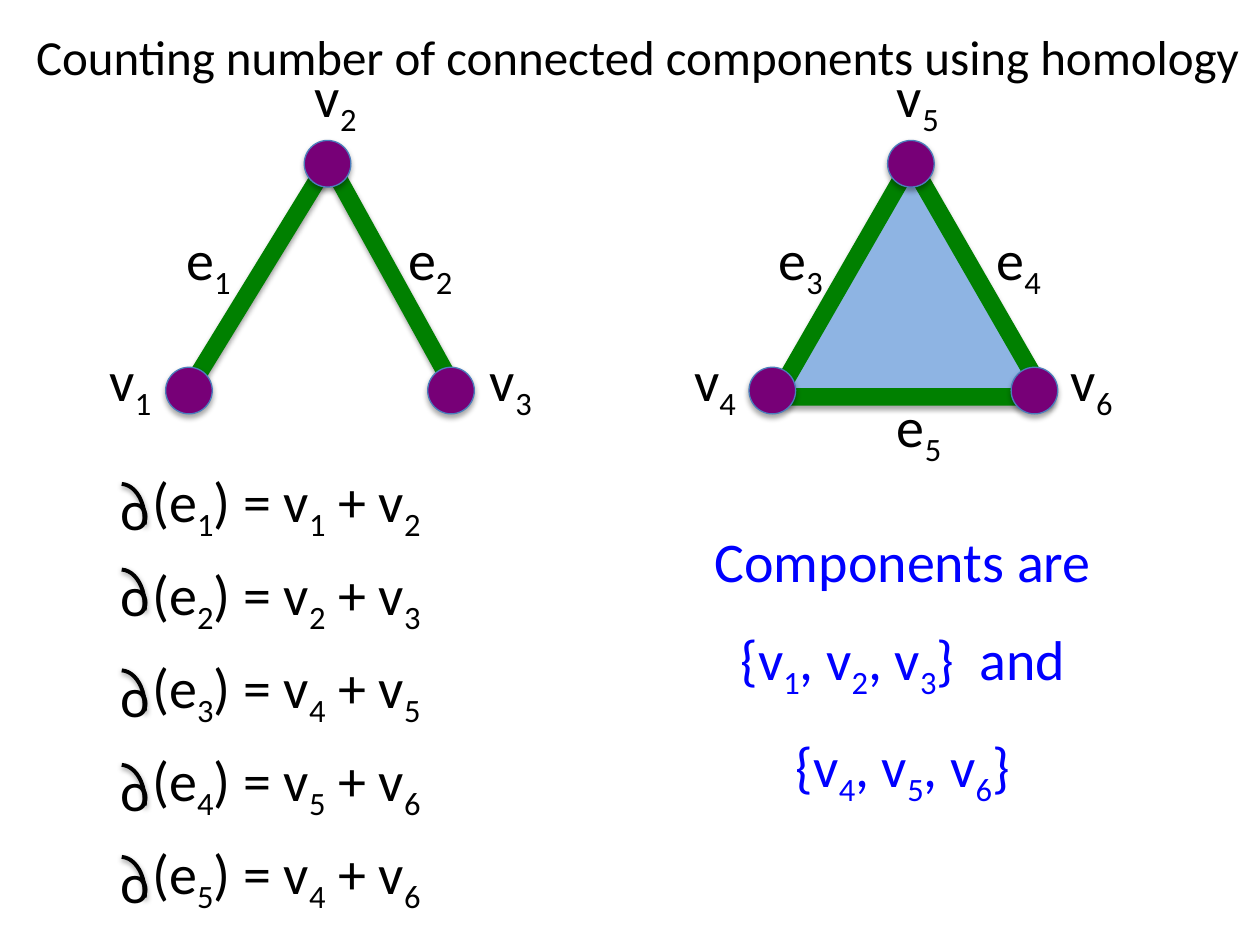
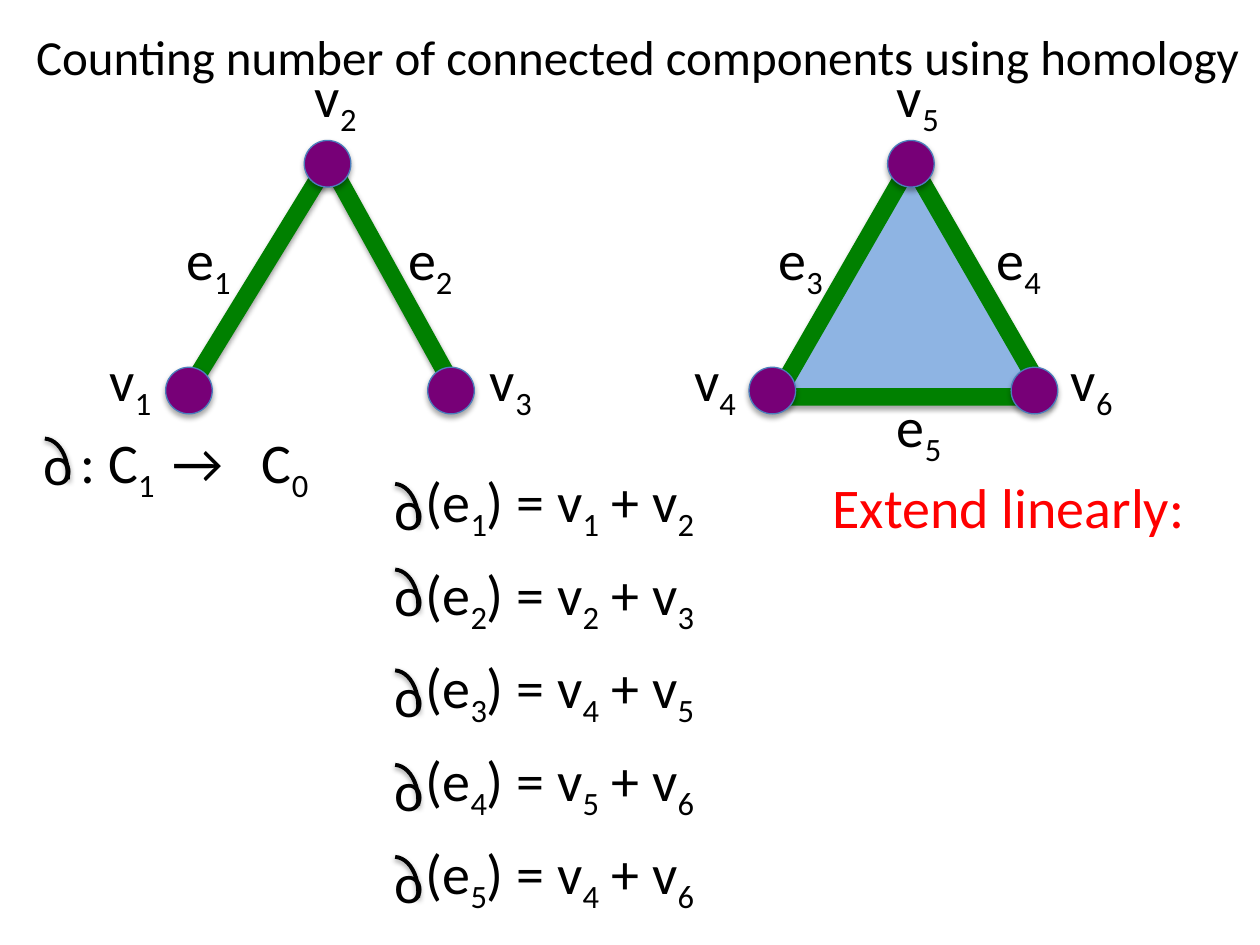
from pptx import Presentation
from pptx.dml.color import RGBColor
from pptx.enum.shapes import MSO_CONNECTOR as CONN, MSO_SHAPE as SHAPE
from pptx.enum.text import MSO_ANCHOR as ANCHOR, MSO_AUTO_SIZE as FIT, PP_ALIGN as ALIGN
from pptx.oxml import parse_xml
from pptx.oxml.ns import nsdecls
from pptx.util import Inches, Pt

BLACK = RGBColor(0x00, 0x00, 0x00)
BLUE = RGBColor(0x00, 0x00, 0xFF)
RED = RGBColor(0xFF, 0x00, 0x00)
GREEN = RGBColor(0x00, 0x80, 0x00)
PURPLE = RGBColor(0x77, 0x00, 0x77)
OUTLINE = RGBColor(0x4B, 0x7E, 0xBC)
SKY = RGBColor(0x8E, 0xB4, 0xE3)

# Content: "_" puts the next character in subscript
TITLE = "Counting number of connected components using homology"
TRIANGLE_GRAPH = {
    "triangle": (6.16, 1.29, 2.14, 1.86),
    "edges": [],
    "vertices": [(6.13, 3.1), (8.21, 3.1), (7.23, 1.3)],
    "labels": [("v_6", 8.4, 2.69), ("v_4", 5.41, 2.69), ("v_5", 7.02, 0.44),
               ("e_3", 6.08, 1.73), ("e_5", 7.02, 3.06), ("e_4", 7.81, 1.73)],
}
PATH_GRAPH = {
    "triangle": None,
    "edges": [((2.61, 1.28), (3.61, 3.09)), ((1.5, 3.09), (2.61, 1.28))],
    "vertices": [(1.5, 3.1), (3.58, 3.1), (2.6, 1.3)],
    "labels": [("v_1", 0.77, 2.69), ("v_2", 2.4, 0.44), ("v_3", 3.79, 2.69),
               ("e_1", 1.38, 1.73), ("e_2", 3.14, 1.73)],
}
# Boundary of each edge, with the top of its boundary symbol
BOUNDARIES = [("(e_1) = v_1 + v_2", 3.84), ("(e_2) = v_2 + v_3", 4.52),
              ("(e_3) = v_4 + v_5", 5.32), ("(e_4) = v_5 + v_6", 6.07),
              ("(e_5) = v_4 + v_6", 6.8)]
COMPONENTS = ["Components are", "{v_1, v_2, v_3}  and", "{v_4, v_5, v_6}"]
BOUNDARY_MAP = ": C_1\t→\tC_0"
EXTEND = "Extend linearly:"

DOT = 0.37
ROW_TOP, ROW_PITCH, ROW_H = 3.65, 0.74, 0.64
FONT = {"name": "Calibri", "size": Pt(32)}
TITLE_FONT = {"name": "Calibri", "size": Pt(28)}


def inches(*values):
    return [Inches(v) for v in values]


def add_run(p, text, color, font, subscript=False):
    r = p.add_run()
    r.text = text
    for name, value in font.items():
        setattr(r.font, name, value)
    r.font.color.rgb = color
    if subscript:
        r._r.get_or_add_rPr().set("baseline", "-25000")


def write(p, text, color=BLACK, font=FONT):
    head, *tails = text.split("_")
    if head:
        add_run(p, head, color, font)
    for tail in tails:
        add_run(p, tail[0], color, font, subscript=True)
        if tail[1:]:
            add_run(p, tail[1:], color, font)


def add_text(shapes, box, lines, color=BLACK, **para):
    tf = shapes.add_textbox(*inches(*box)).text_frame
    tf.word_wrap = True
    tf.auto_size = FIT.SHAPE_TO_FIT_TEXT
    for i, line in enumerate(lines):
        p = tf.add_paragraph() if i else tf.paragraphs[0]
        for name, value in para.items():
            setattr(p, name, value)
        write(p, line, color)
    return tf


def outline(sp, color, width, dist=1.6, alpha=38):
    """Set the line, then the soft shadow straight below."""
    sp.line.color.rgb = color
    sp.line.width = Pt(width)
    sp._element.spPr.append(parse_xml(
        f'<a:effectLst {nsdecls("a")}><a:outerShdw blurRad="{Pt(3.1)}" '
        f'dist="{Pt(dist)}" dir="5400000" rotWithShape="0"><a:srgbClr val="000000">'
        f'<a:alpha val="{alpha * 1000}"/></a:srgbClr></a:outerShdw></a:effectLst>'))


def add_solid(shapes, kind, box, fill, line, width):
    sp = shapes.add_shape(kind, *inches(*box))
    sp.fill.solid()
    sp.fill.fore_color.rgb = fill
    outline(sp, line, width, dist=1.8, alpha=35)


def add_graph(slide, graph):
    shapes = slide.shapes.add_group_shape().shapes
    if graph["triangle"]:
        add_solid(shapes, SHAPE.ISOSCELES_TRIANGLE, graph["triangle"], SKY, GREEN, 10)
    for start, end in graph["edges"]:
        outline(shapes.add_connector(CONN.STRAIGHT, *inches(*start, *end)), GREEN, 10)
    for x, y in graph["vertices"]:
        add_solid(shapes, SHAPE.OVAL, (x - DOT / 2, y - DOT / 2, DOT, DOT),
                  PURPLE, OUTLINE, 0.75)
    for text, x, y in graph["labels"]:
        add_text(shapes, (x, y, 0.71, ROW_H), [text])


def add_boundary_symbol(shapes, x, y):
    """Draw the boundary sign as an arc over a letter o."""
    sp = shapes.add_shape(SHAPE.ARC, *inches(x, y, 0.41, 0.62))
    sp.rotation = 4
    sp.fill.background()
    outline(sp, BLACK, 2.25)
    add_text(shapes, (x + 0.12, y - 0.12, 0.65, ROW_H), ["o"])


def add_boundaries(slide, x):
    for i, (text, symbol_top) in enumerate(BOUNDARIES):
        shapes = slide.shapes.add_group_shape().shapes
        add_boundary_symbol(shapes, x, symbol_top)
        add_text(shapes, (x + 0.37, ROW_TOP + i * ROW_PITCH, 3.42, ROW_H), [text])


def add_boundary_map(slide):
    shapes = slide.shapes.add_group_shape().shapes
    tf = add_text(shapes, (0.54, 3.34, 2.22, ROW_H), [BOUNDARY_MAP])
    stops = "".join(f'<a:tab pos="{Inches(x)}" algn="l"/>' for x in (0.73, 1.44))
    tf.paragraphs[0]._p.get_or_add_pPr().append(
        parse_xml(f'<a:tabLst {nsdecls("a")}>{stops}</a:tabLst>'))
    add_boundary_symbol(shapes, 0.13, 3.48)


def add_graph_slide(prs):
    """Start a slide with the shared title and both graphs."""
    slide = prs.slides.add_slide(prs.slide_layouts[5])
    title = slide.shapes.title
    title.left, title.top, title.width, title.height = inches(0.12, 0.16, 9.88, 0.57)
    tf = title.text_frame
    for name, value in {"word_wrap": True, "auto_size": FIT.NONE,
                        "vertical_anchor": ANCHOR.TOP}.items():
        setattr(tf, name, value)
    tf.paragraphs[0].alignment = ALIGN.CENTER
    write(tf.paragraphs[0], TITLE, font=TITLE_FONT)
    add_graph(slide, TRIANGLE_GRAPH)
    add_graph(slide, PATH_GRAPH)
    return slide


def main():
    prs = Presentation()
    prs.slide_width, prs.slide_height = inches(10, 7.5)

    # Slide 1: boundaries and the resulting components
    slide = add_graph_slide(prs)
    add_boundaries(slide, 0.74)
    add_text(slide.shapes, (5.22, 3.92, 3.89, 2.9), COMPONENTS, BLUE,
             alignment=ALIGN.CENTER, line_spacing=1.4)

    # Slide 2: the boundary map, extended linearly
    slide = add_graph_slide(prs)
    add_boundary_map(slide)
    add_boundaries(slide, 2.91)
    add_text(slide.shapes, (6.51, 3.7, 3.67, ROW_H), [EXTEND], RED)

    prs.save("out.pptx")


if __name__ == "__main__":
    main()
